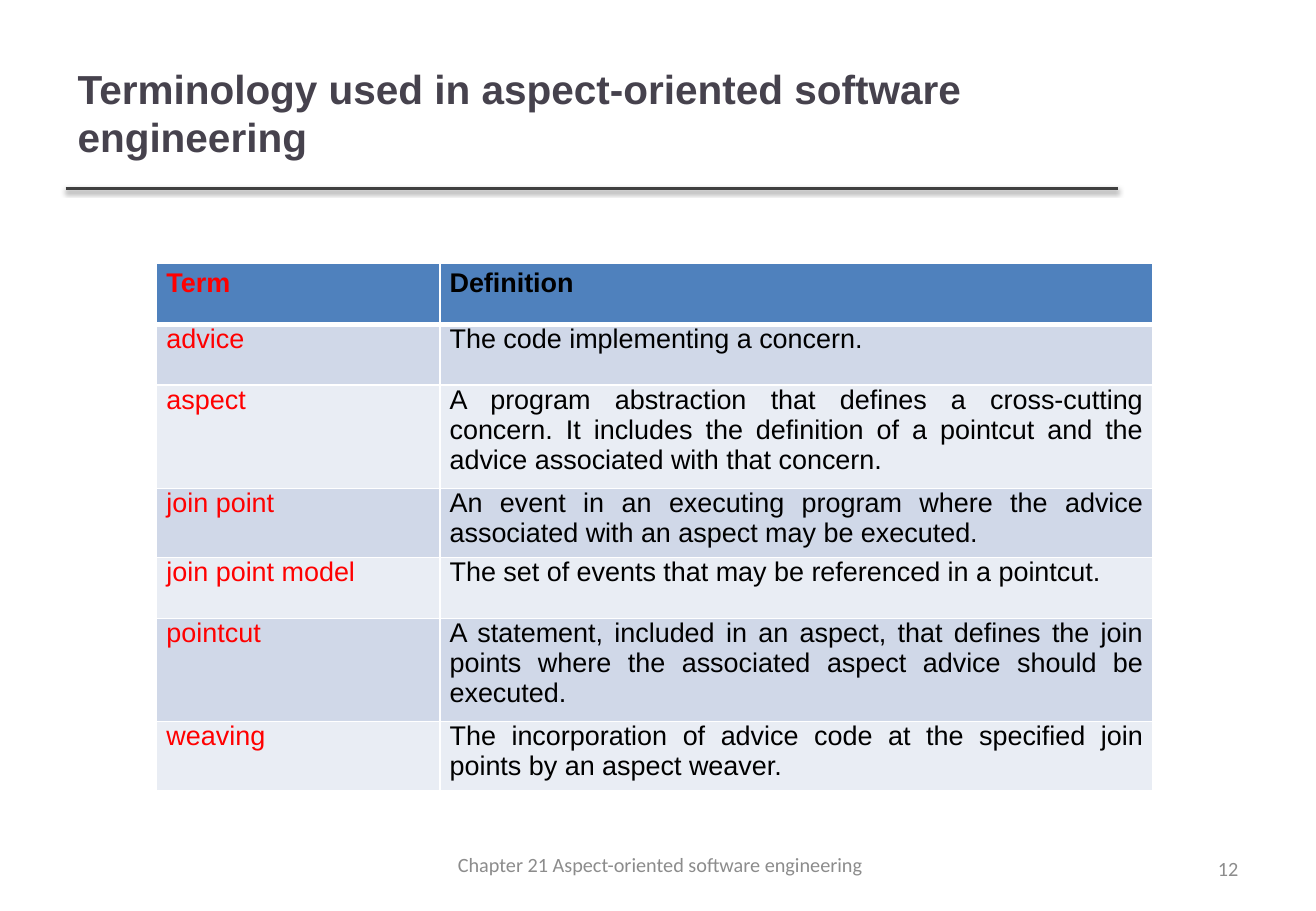
from lxml import etree
from pptx import Presentation
from pptx.dml.color import RGBColor
from pptx.enum.shapes import MSO_CONNECTOR
from pptx.enum.text import MSO_ANCHOR, PP_ALIGN
from pptx.oxml import parse_xml
from pptx.util import Pt

PX = 9144
NS = "http://schemas.openxmlformats.org/drawingml/2006/main"
LEFT, MID, RIGHT, JUST = PP_ALIGN.LEFT, PP_ALIGN.CENTER, PP_ALIGN.RIGHT, PP_ALIGN.JUSTIFY
MIDDLE = MSO_ANCHOR.MIDDLE
STRAIGHT = MSO_CONNECTOR.STRAIGHT

INK, RED, BLACK, GRAY = "46424D", "FF0000", "000000", "8C8C8C"
HEAD, BANDS = "4F81BD", ("E9EDF4", "D0D8E8")
SHADOW = f"""<a:effectLst xmlns:a="{NS}">
  <a:outerShdw blurRad="39370" dist="20320" dir="5400000" rotWithShape="0">
    <a:srgbClr val="000000"><a:alpha val="38000"/></a:srgbClr>
  </a:outerShdw>
</a:effectLst>"""

COLS = (233, 587)
ROWS = (
    (50, "Term", "Definition"),
    (50, "advice", "The code implementing a concern."),
    (85, "aspect", "A program abstraction that defines a cross-cutting concern. It includes "
     "the definition of a pointcut and the advice associated with that concern."),
    (57, "join point", "An event in an executing program where the advice associated with an "
     "aspect may be executed."),
    (50, "join point model", "The set of events that may be referenced in a pointcut."),
    (85, "pointcut", "A statement, included in an aspect, that defines the join points where "
     "the associated aspect advice should be executed."),
    (57, "weaving", "The incorporation of advice code at the specified join points by an "
     "aspect weaver."),
)


def px(*sizes):
    return [size * PX for size in sizes]


def color(code):
    return RGBColor.from_string(code)


class Deck:
    """Holds the style and the current slide, and draws each kind of element."""

    def __init__(self, width, height):
        self.deck = Presentation()
        self.deck.slide_width, self.deck.slide_height = px(width, height)
        self.slide = self.deck.slides.add_slide(self.deck.slide_layouts[6])

    def fill(self, frame, text, size, code, face="Arial", bold=False, align=LEFT):
        para = frame.paragraphs[0]
        para.text = text
        para.alignment = align
        font = para.font
        font.name, font.size, font.bold = face, Pt(size), bold
        font.color.rgb = color(code)
        return para

    def text(self, box, text, size, code, **style):
        frame = self.slide.shapes.add_textbox(*px(*box)).text_frame
        frame.word_wrap = True
        frame.vertical_anchor = MIDDLE
        self.fill(frame, text, size, code, **style)

    def rule(self, left, right, top, code, width):
        line = self.slide.shapes.add_connector(STRAIGHT, *px(left, top, right, top))
        line.line.color.rgb = color(code)
        line.line.width = Pt(width)
        line._element.spPr.append(parse_xml(SHADOW))

    def edge(self, cell, foot):
        props = cell._tc.get_or_add_tcPr()
        for side, width in zip("LRTB", (1, 1, 1, foot)):
            line = etree.SubElement(props, f"{{{NS}}}ln{side}", w=str(Pt(width)))
            paint = etree.SubElement(line, f"{{{NS}}}solidFill")
            etree.SubElement(paint, f"{{{NS}}}srgbClr", val="FFFFFF")

    def table(self, left, top, cols, rows):
        high = sum(row[0] for row in rows)
        box = px(left, top, sum(cols), high)
        grid = self.slide.shapes.add_table(len(rows), len(cols), *box).table
        for col, width in zip(grid.columns, cols):
            col.width = width * PX
        for at, (height, *words) in enumerate(rows):
            first = at == 0
            grid.rows[at].height = height * PX
            for cell, word, code in zip(grid.rows[at].cells, words, (RED, BLACK)):
                cell.margin_left, cell.margin_right = px(8, 8)
                cell.margin_top, cell.margin_bottom = px(4 if first else 0, 0)
                self.edge(cell, 3 if first else 1)
                cell.fill.solid()
                cell.fill.fore_color.rgb = color(HEAD if first else BANDS[at % 2])
                para = self.fill(cell.text_frame, word, 16, code, bold=first, align=JUST)
                para.space_after = Pt(3)

    def save(self):
        self.deck.save("out.pptx")


def main():
    deck = Deck(1083, 750)
    deck.rule(54, 920, 155, "404040", 2)
    deck.text((54, 30, 864, 125), "Terminology used in aspect-oriented software engineering",
              24, INK, bold=True)
    deck.table(129, 217, COLS, ROWS)
    deck.text((776, 695, 253, 40), "12", 12, GRAY, face="Calibri", align=RIGHT)
    deck.text((337, 692, 413, 40), "Chapter 21 Aspect-oriented software engineering",
              12, GRAY, face="Calibri", align=MID)
    deck.save()


if __name__ == "__main__":
    main()
